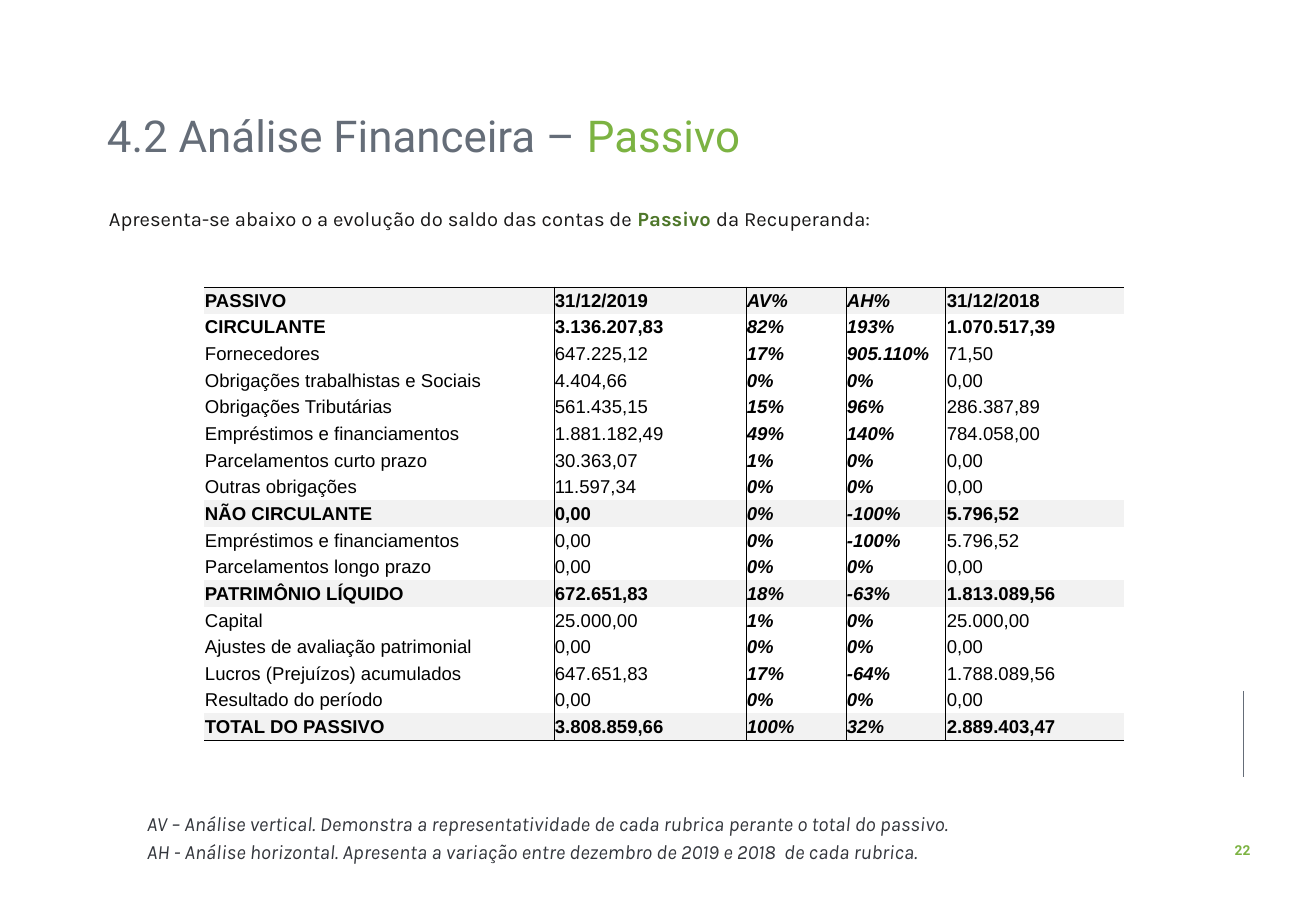
import lxml.etree
import pptx
import pptx.dml.color
import pptx.enum.shapes
import pptx.enum.text
import pptx.oxml.ns
import pptx.util

SCALE = 7526  # EMU per px
COLORS = {
    "slate": "656D78", "green": "7CB342", "dark_green": "4E772A", "text": "181717",
    "note": "33363C", "black": "000000", "white": "FFFFFF", "band": "F2F2F2",
}
ALIGN = pptx.enum.text.PP_ALIGN
ANCHOR = pptx.enum.text.MSO_ANCHOR
qn = pptx.oxml.ns.qn


def px(n):
    return pptx.util.Emu(n * SCALE)


def add_run(p, text, color, **font):
    r = p.add_run()
    r.text = text
    r.font.color.rgb = pptx.dml.color.RGBColor.from_string(COLORS[color])
    for name, value in font.items():
        setattr(r.font, name, value)


prs = pptx.Presentation()
prs.slide_width, prs.slide_height = px(1316), px(911)
s = prs.slides.add_slide(prs.slide_layouts[6])

# Side rule
rule = s.shapes.add_connector(
    pptx.enum.shapes.MSO_CONNECTOR.STRAIGHT, px(1243), px(691), px(1243), px(777))
rule.line.color.rgb = pptx.dml.color.RGBColor.from_string(COLORS["slate"])
rule.line.width = pptx.util.Pt(0.5)
lxml.etree.SubElement(rule._element.spPr, qn("a:effectLst"))

# Text boxes: place, wrap, anchor, paragraph format, first-line indent, paragraphs of runs
title = {"name": "Roboto", "size": pptx.util.Pt(26)}
body = {"name": "Karla", "size": pptx.util.Pt(12)}
note = {**body, "italic": True}
number = {"name": "Roboto", "size": pptx.util.Pt(8.1), "bold": True}
texts = [
    ((1222, 836, 41, 29), False, ANCHOR.TOP, {"alignment": ALIGN.CENTER}, 0,
     [[("22", "green", number)]]),
    ((95, 106, 994, 64), True, ANCHOR.MIDDLE, {"line_spacing": 0.9}, 0,
     [[("4.2 Análise Financeira – ", "slate", title), ("Passivo", "green", title)]]),
    ((97, 188, 1057, 45), True, ANCHOR.TOP,
     {"alignment": ALIGN.JUSTIFY, "line_spacing": 1.5}, 0,
     [[("Apresenta-se abaixo o a evolução do saldo das contas de ", "text", body),
       ("Passivo ", "dark_green", {**body, "bold": True}),
       ("da Recuperanda:", "text", body)]]),
    ((97, 802, 1057, 67), True, ANCHOR.TOP,
     {"alignment": ALIGN.JUSTIFY, "line_spacing": 1.14}, 38,
     [[("AV – Análise vertical. Demonstra a representatividade de cada rubrica "
        "perante o total do passivo.", "note", note)],
      [("AH - Análise horizontal. Apresenta a variação entre dezembro de 2019 e 2018  "
        "de cada rubrica.", "note", note)]]),
]
for place, wrap, anchor, layout, indent, paragraphs in texts:
    tf = s.shapes.add_textbox(*map(px, place)).text_frame
    tf.word_wrap = wrap
    tf.vertical_anchor = anchor
    for i, runs in enumerate(paragraphs):
        p = tf.add_paragraph() if i else tf.paragraphs[0]
        for name, value in layout.items():
            setattr(p, name, value)
        if indent:
            p._p.get_or_add_pPr().set("indent", str(px(indent)))
        for text, color, font in runs:
            add_run(p, text, color, **font)

# Balance table
rows = [
    ("PASSIVO", "31/12/2019", "AV%", "AH%", "31/12/2018"),
    ("CIRCULANTE", "3.136.207,83", "82%", "193%", "1.070.517,39"),
    ("Fornecedores", "647.225,12", "17%", "905.110%", "71,50"),
    ("Obrigações trabalhistas e Sociais", "4.404,66", "0%", "0%", "0,00"),
    ("Obrigações Tributárias", "561.435,15", "15%", "96%", "286.387,89"),
    ("Empréstimos e financiamentos", "1.881.182,49", "49%", "140%", "784.058,00"),
    ("Parcelamentos curto prazo", "30.363,07", "1%", "0%", "0,00"),
    ("Outras obrigações", "11.597,34", "0%", "0%", "0,00"),
    ("NÃO CIRCULANTE", "0,00", "0%", "-100%", "5.796,52"),
    ("Empréstimos e financiamentos", "0,00", "0%", "-100%", "5.796,52"),
    ("Parcelamentos longo prazo", "0,00", "0%", "0%", "0,00"),
    ("PATRIMÔNIO LÍQUIDO", "672.651,83", "18%", "-63%", "1.813.089,56"),
    ("Capital", "25.000,00", "1%", "0%", "25.000,00"),
    ("Ajustes de avaliação patrimonial", "0,00", "0%", "0%", "0,00"),
    ("Lucros (Prejuízos) acumulados", "647.651,83", "17%", "-64%", "1.788.089,56"),
    ("Resultado do período", "0,00", "0%", "0%", "0,00"),
    ("TOTAL DO PASSIVO", "3.808.859,66", "100%", "32%", "2.889.403,47"),
]
widths = [350, 192, 100, 100, 178]
last_row, last_col = len(rows) - 1, len(widths) - 1
table = s.shapes.add_table(
    len(rows), len(widths), px(204), px(287), px(sum(widths)), px(453)).table
table.first_row = table.horz_banding = False
# "No Style, No Grid"
table._tbl.tblPr.find(qn("a:tableStyleId")).text = "{2D5ABB26-0587-4C30-8999-92F81FD0307C}"
for column, width in zip(table.columns, widths):
    column.width = px(width)

cell_format = {"margin_left": px(1), "margin_right": px(1), "margin_top": px(1),
               "margin_bottom": 0, "vertical_anchor": ANCHOR.MIDDLE}
for i, row in enumerate(rows):
    heading = row[0].isupper()
    fill = "band" if heading and row[0] != "CIRCULANTE" else "white"
    for j, text in enumerate(row):
        cell = table.cell(i, j)
        for name, value in cell_format.items():
            setattr(cell, name, value)
        borders = {"lnL": j > 0, "lnR": j < last_col, "lnT": i == 0, "lnB": i == last_row}
        for tag, shown in borders.items():
            if shown:
                ln = lxml.etree.SubElement(
                    cell._tc.get_or_add_tcPr(), qn("a:" + tag), w=str(pptx.util.Pt(0.5)))
                solid = lxml.etree.SubElement(ln, qn("a:solidFill"))
                lxml.etree.SubElement(solid, qn("a:srgbClr"), val=COLORS["black"])
        cell.fill.solid()
        cell.fill.fore_color.rgb = pptx.dml.color.RGBColor.from_string(COLORS[fill])
        percent = j in (2, 3)
        add_run(cell.text_frame.paragraphs[0], text, "black", name="Arial",
                size=pptx.util.Pt(11), bold=heading or percent, italic=percent)

prs.save("out.pptx")
